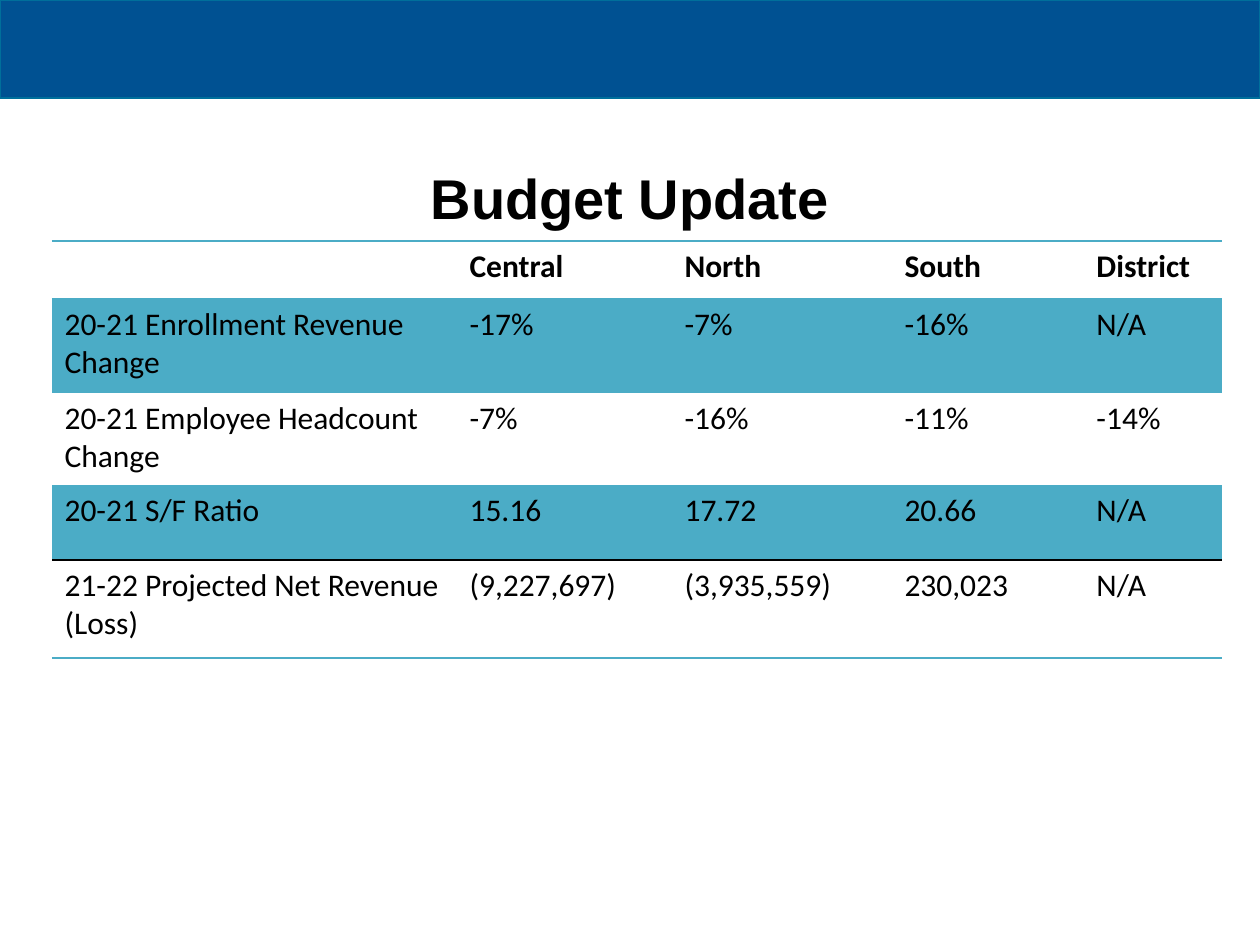
from dataclasses import dataclass

from lxml import etree
from pptx import Presentation
from pptx.dml.color import RGBColor
from pptx.enum.shapes import MSO_SHAPE
from pptx.enum.text import MSO_ANCHOR, PP_ALIGN
from pptx.oxml.ns import qn
from pptx.util import Pt

RECT = MSO_SHAPE.RECTANGLE
MIDDLE = MSO_ANCHOR.MIDDLE
CENTER = PP_ALIGN.CENTER


@dataclass(frozen=True)
class Theme:
    """Colours, fonts and type sizes of the slide."""
    bar: str = "005192"
    edge: str = "006F9B"
    ink: str = "000000"
    teal: str = "4BACC6"
    tint: int = 20
    head: str = "Arial"
    body: str = "Calibri"
    title: int = 32
    text: int = 18


THEME = Theme()
COLS = (405, 215, 220, 192, 138)
ROWS = (58, 94, 92, 75, 98)
DATA = (
    ("", "Central", "North", "South", "District"),
    ("20-21 Enrollment Revenue Change", "-17%", "-7%", "-16%", "N/A"),
    ("20-21 Employee Headcount Change", "-7%", "-16%", "-11%", "-14%"),
    ("20-21 S/F Ratio", "15.16", "17.72", "20.66", "N/A"),
    ("21-22 Projected Net Revenue (Loss)", "(9,227,697)", "(3,935,559)",
     "230,023", "N/A"),
)
RULES = (THEME.teal, THEME.teal, None, None, THEME.ink, THEME.teal)
SHADED = (1, 3)


def px(num):
    """Turn pixels into EMU."""
    return round(num * 914400 / 126)


def style(para, face, size, bold):
    """Set the font of a paragraph."""
    font = para.font
    font.name, font.size, font.bold = face, Pt(size), bold
    font.color.rgb = RGBColor.from_string(THEME.ink)


def add_bar(slide, box):
    """Draw the band across the top."""
    bar = slide.shapes.add_shape(RECT, *map(px, box))
    bar.shadow.inherit = False
    bar.fill.solid()
    bar.fill.fore_color.rgb = RGBColor.from_string(THEME.bar)
    bar.line.color.rgb = RGBColor.from_string(THEME.edge)
    bar.line.width = Pt(0.75)


def set_title(slide, box, text):
    """Place and format the title."""
    title = slide.shapes.title
    title.left, title.top, title.width, title.height = map(px, box)
    frame = title.text_frame
    frame.text = text
    frame.vertical_anchor = MIDDLE
    para = frame.paragraphs[0]
    para.alignment = CENTER
    style(para, THEME.head, THEME.title, True)


def set_edge(cell, tag, color):
    """Rule one side of a cell, or clear it."""
    props = cell._tc.get_or_add_tcPr()
    line = etree.SubElement(props, qn(tag), w=str(Pt(1)))
    if color:
        fill = etree.SubElement(line, qn("a:solidFill"))
        etree.SubElement(fill, qn("a:srgbClr"), val=color)
    else:
        etree.SubElement(line, qn("a:noFill"))


def set_fill(cell, shaded):
    """Tint a cell or leave it clear."""
    if not shaded:
        cell.fill.background()
        return
    cell.fill.solid()
    cell.fill.fore_color.rgb = RGBColor.from_string(THEME.teal)
    color = cell._tc.tcPr.find(".//" + qn("a:srgbClr"))
    etree.SubElement(color, qn("a:alpha"), val=str(THEME.tint * 1000))


def add_grid(slide, left, top):
    """Build the budget table."""
    frame = slide.shapes.add_table(
        len(ROWS), len(COLS), px(left), px(top), px(sum(COLS)), px(sum(ROWS)))
    table = frame.table
    table.first_row = table.horz_banding = False
    for col, width in zip(table.columns, COLS):
        col.width = px(width)
    for idx, (row, height) in enumerate(zip(table.rows, ROWS)):
        row.height = px(height)
        edges = {"a:lnL": None, "a:lnR": None,
                 "a:lnT": RULES[idx], "a:lnB": RULES[idx + 1]}
        for cell, text in zip(row.cells, DATA[idx]):
            cell.text_frame.text = text
            style(cell.text_frame.paragraphs[0], THEME.body, THEME.text, idx == 0)
            for tag, color in edges.items():
                set_edge(cell, tag, color)
            set_fill(cell, idx in SHADED)


def main():
    """Build and save the slide."""
    deck = Presentation()
    deck.slide_width, deck.slide_height = px(1260), px(945)
    slide = deck.slides.add_slide(deck.slide_layouts[5])
    add_bar(slide, (0, 0, 1260, 98))
    set_title(slide, (63, 123, 1134, 148), "Budget Update")
    add_grid(slide, 52, 241)
    deck.save("out.pptx")


if __name__ == "__main__":
    main()
